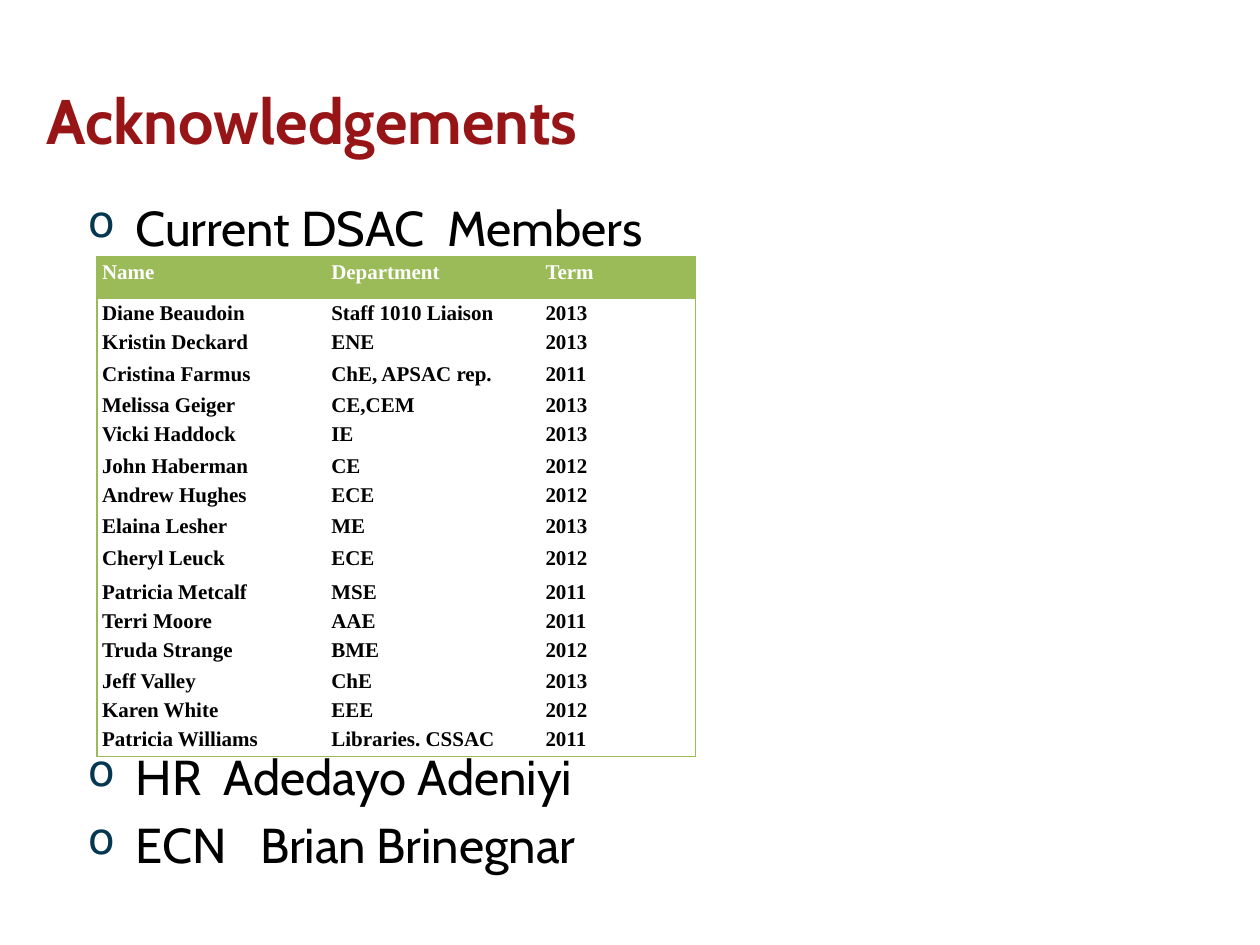
from lxml import etree
from pptx import Presentation
from pptx.dml.color import RGBColor
from pptx.enum import text
from pptx.oxml.ns import qn
from pptx.util import Inches, Pt

COLORS = {"title": "981517", "body": "000000", "bullet": "043750",
          "green": "9BBB59", "header": "FFFFFF"}
COLUMNS = [1.82, 1.7, 1.23]
ROWS = [0.33, 0.22, 0.25, 0.25, 0.23, 0.25, 0.23, 0.25,
        0.25, 0.27, 0.21, 0.23, 0.25, 0.21, 0.23, 0.25]
MEMBERS = [
    ("Name", "Department", "Term"),
    ("Diane Beaudoin", "Staff 1010 Liaison", "2013"),
    ("Kristin Deckard", "ENE", "2013"),
    ("Cristina Farmus", "ChE, APSAC rep.", "2011"),
    ("Melissa Geiger", "CE,CEM", "2013"),
    ("Vicki Haddock", "IE", "2013"),
    ("John Haberman", "CE", "2012"),
    ("Andrew Hughes", "ECE", "2012"),
    ("Elaina Lesher", "ME", "2013"),
    ("Cheryl Leuck", "ECE", "2012"),
    ("Patricia Metcalf", "MSE", "2011"),
    ("Terri Moore", "AAE", "2011"),
    ("Truda Strange", "BME", "2012"),
    ("Jeff Valley", "ChE", "2013"),
    ("Karen White", "EEE", "2012"),
    ("Patricia Williams", "Libraries. CSSAC", "2011"),
]
BULLETS = [("Current DSAC  Members", 0), ("HR  Adedayo Adeniyi", 280),
           ("ECN   Brian Brinegnar", 5)]
NO_STYLE = "{2D5ABB26-0587-4C30-8999-92F81FD0307C}"


class Deck:
    heading_font = "Cabin"
    table_font = "Times New Roman"

    def __init__(self, prs):
        self.slide = prs.slides.add_slide(prs.slide_layouts[6])

    def format(self, p, font, size, color, bold=False):
        for r in p.runs:
            r.font.name = font
            r.font.size = Pt(size)
            r.font.bold = bold
            r.font.color.rgb = RGBColor.from_string(COLORS[color])

    def frame(self, box, anchor):
        tf = self.slide.shapes.add_textbox(*map(Inches, box)).text_frame
        tf.word_wrap = True
        tf.vertical_anchor = anchor
        return tf

    def title(self, box, words):
        tf = self.frame(box, text.MSO_ANCHOR.MIDDLE)
        tf.text = words
        self.format(tf.paragraphs[0], self.heading_font, 36, "title", True)

    def bullets(self, box, items):
        tf = self.frame(box, text.MSO_ANCHOR.TOP)
        for i, (words, gap) in enumerate(items):
            p = tf.add_paragraph() if i else tf.paragraphs[0]
            p.text = words
            p.space_before = Pt(gap)
            pPr = p._p.get_or_add_pPr()
            pPr.set("marL", str(Inches(0.38)))
            pPr.set("indent", str(-Inches(0.38)))
            color = etree.SubElement(pPr, qn("a:buClr"))
            etree.SubElement(color, qn("a:srgbClr"), val=COLORS["bullet"])
            etree.SubElement(pPr, qn("a:buSzPct"), val="90000")
            etree.SubElement(pPr, qn("a:buChar"), char="o")
            self.format(p, self.heading_font, 28, "body")

    def border(self, cell, side):
        tcPr = cell._tc.get_or_add_tcPr()
        ln = etree.SubElement(tcPr, qn("a:ln" + side), w=str(Pt(1)))
        fill = etree.SubElement(ln, qn("a:solidFill"))
        etree.SubElement(fill, qn("a:srgbClr"), val=COLORS["green"])

    def table(self, left, top, widths, heights, data):
        size = [Inches(v) for v in (left, top, sum(widths), sum(heights))]
        tbl = self.slide.shapes.add_table(len(data), len(widths), *size).table
        tbl._tbl.tblPr.find(qn("a:tableStyleId")).text = NO_STYLE
        for column, width in zip(tbl.columns, widths):
            column.width = Inches(width)
        for i, (row, height) in enumerate(zip(tbl.rows, heights)):
            row.height = Inches(height)
            for j, cell in enumerate(row.cells):
                cell.text = data[i][j]
                cell.margin_left = cell.margin_right = Inches(0.04)
                cell.margin_top = cell.margin_bottom = 0
                p = cell.text_frame.paragraphs[0]
                p.line_spacing = 1.15
                self.format(p, self.table_font, 12, "body" if i else "header", True)
                edges = {"L": j == 0, "R": j == len(widths) - 1,
                         "T": i == 0, "B": i == len(data) - 1}
                for side, outer in edges.items():
                    if outer:
                        self.border(cell, side)
                if i:
                    cell.fill.background()
                else:
                    cell.fill.solid()
                    cell.fill.fore_color.rgb = RGBColor.from_string(COLORS["green"])


def main():
    prs = Presentation()
    prs.slide_width, prs.slide_height = Inches(10), Inches(7.5)
    deck = Deck(prs)
    deck.title((0.27, 0.51, 7.76, 0.87), "Acknowledgements")
    deck.table(0.77, 2.04, COLUMNS, ROWS, MEMBERS)
    deck.bullets((0.6, 1.52, 7.66, 5.73), BULLETS)
    prs.save("out.pptx")


if __name__ == "__main__":
    main()
